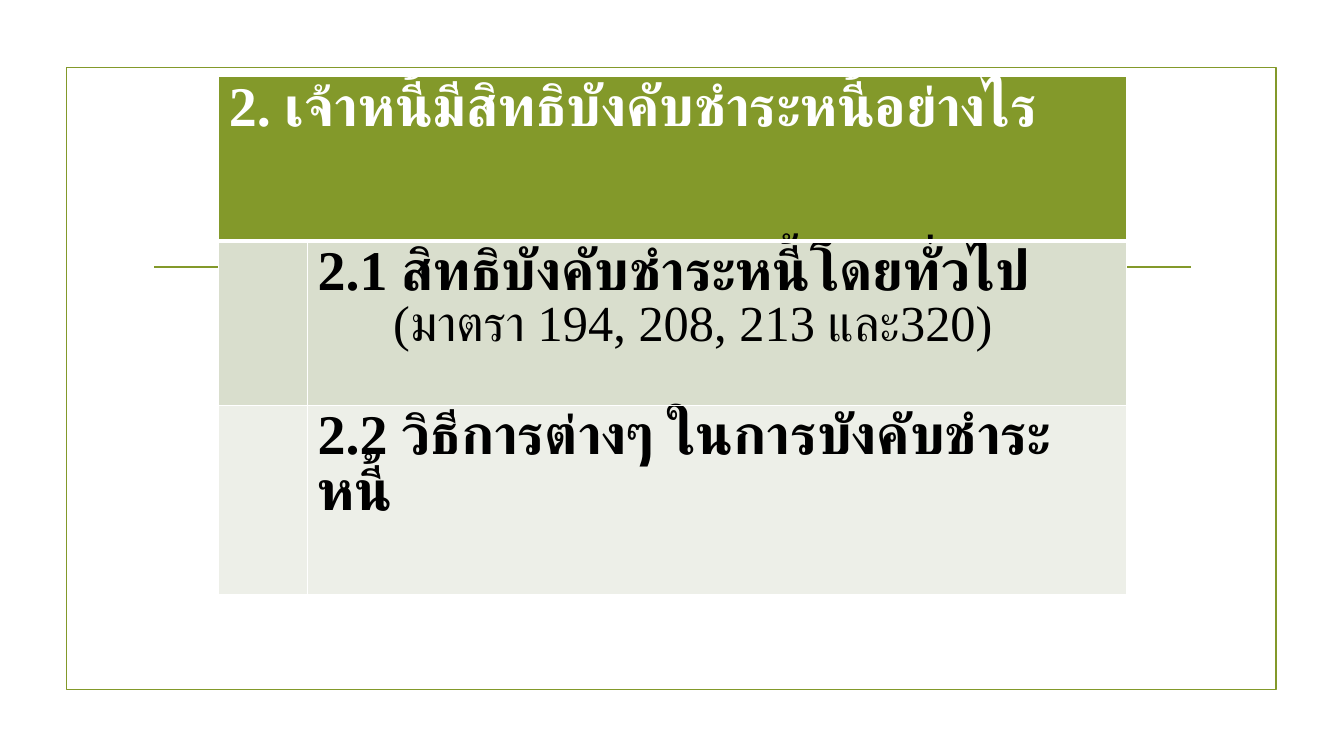
from lxml.etree import SubElement
from pptx import Presentation
from pptx.dml.color import RGBColor
from pptx.enum.shapes import MSO_CONNECTOR, MSO_SHAPE
from pptx.oxml.ns import qn
from pptx.util import Inches, Pt

FONT = "Times New Roman"
GREEN = "83992A"
WHITE = "FFFFFF"


def rgb(value):
    """Turn a hex string into a colour."""
    return RGBColor.from_string(value)


def add_frame(slide, left, top, width, height):
    """Add the thin green frame around the content."""
    frame = slide.shapes.add_shape(
        MSO_SHAPE.RECTANGLE, Inches(left), Inches(top), Inches(width), Inches(height))
    frame.shadow.inherit = False
    frame.fill.background()
    frame.line.color.rgb = rgb(GREEN)
    frame.line.width = Pt(1.25)


def add_rule(slide, left, right, y):
    """Add the horizontal green rule behind the table."""
    rule = slide.shapes.add_connector(
        MSO_CONNECTOR.STRAIGHT, Inches(left), Inches(y), Inches(right), Inches(y))
    rule.line.color.rgb = rgb(GREEN)
    rule.line.width = Pt(1.25)
    SubElement(rule._element.spPr, qn("a:effectLst"))


def write(paragraph, text, size=40, bold=True, color="000000", indent=0):
    """Write one formatted paragraph in Latin and Thai script."""
    properties = paragraph._p.get_or_add_pPr()
    properties.set("marL", str(Inches(indent)))
    properties.set("indent", "0")
    paragraph.line_spacing = 0.9
    run = paragraph.add_run()
    run.text = text
    run.font.name = FONT
    run.font.size = Pt(size)
    run.font.bold = bold
    run.font.color.rgb = rgb(color)
    SubElement(run._r.get_or_add_rPr(), qn("a:cs"), typeface=FONT)


def style_cell(cell, fill, bottom=1):
    """Give a cell white borders and a solid fill."""
    properties = cell._tc.get_or_add_tcPr()
    for side, width in (("L", 1), ("R", 1), ("T", 1), ("B", bottom)):
        border = SubElement(properties, qn(f"a:ln{side}"), w=str(Pt(width)))
        solid = SubElement(border, qn("a:solidFill"))
        SubElement(solid, qn("a:srgbClr"), val=WHITE)
    cell.fill.solid()
    cell.fill.fore_color.rgb = rgb(fill)


def add_outline_table(slide):
    """Add the table with the heading and its two subtopics."""
    heights = (1.63, 1.63, 1.88)
    outline = slide.shapes.add_table(
        3, 2, Inches(2.17), Inches(0.76), Inches(9), Inches(sum(heights))).table
    for column, width in zip(outline.columns, (0.88, 8.12)):
        column.width = Inches(width)
    fills = (GREEN, "D9DECD", "EDEFE8")
    for index, (row, height, fill) in enumerate(zip(outline.rows, heights, fills)):
        row.height = Inches(height)
        for cell in row.cells:
            style_cell(cell, fill, bottom=1 if index else 3)

    heading = outline.cell(0, 0)
    heading.merge(outline.cell(0, 1))
    write(heading.text_frame.paragraphs[0],
          "2. เจ้าหนี้มีสิทธิบังคับชำระหนี้อย่างไร", color=WHITE)
    general_right = outline.cell(1, 1).text_frame
    write(general_right.paragraphs[0], "2.1 สิทธิบังคับชำระหนี้โดยทั่วไป")
    write(general_right.add_paragraph(), "(มาตรา 194, 208, 213 และ320)",
          size=36, bold=False, indent=0.75)
    methods = outline.cell(2, 1).text_frame
    write(methods.paragraphs[0], "2.2 วิธีการต่างๆ ในการบังคับชำระหนี้")


def main():
    """Build and save the slide."""
    deck = Presentation()
    deck.slide_width = Inches(13.33)
    deck.slide_height = Inches(7.5)
    slide = deck.slides.add_slide(deck.slide_layouts[6])
    add_frame(slide, 0.66, 0.67, 12, 6.17)
    add_rule(slide, 1.53, 11.81, 2.65)
    add_outline_table(slide)
    deck.save("out.pptx")


if __name__ == "__main__":
    main()
